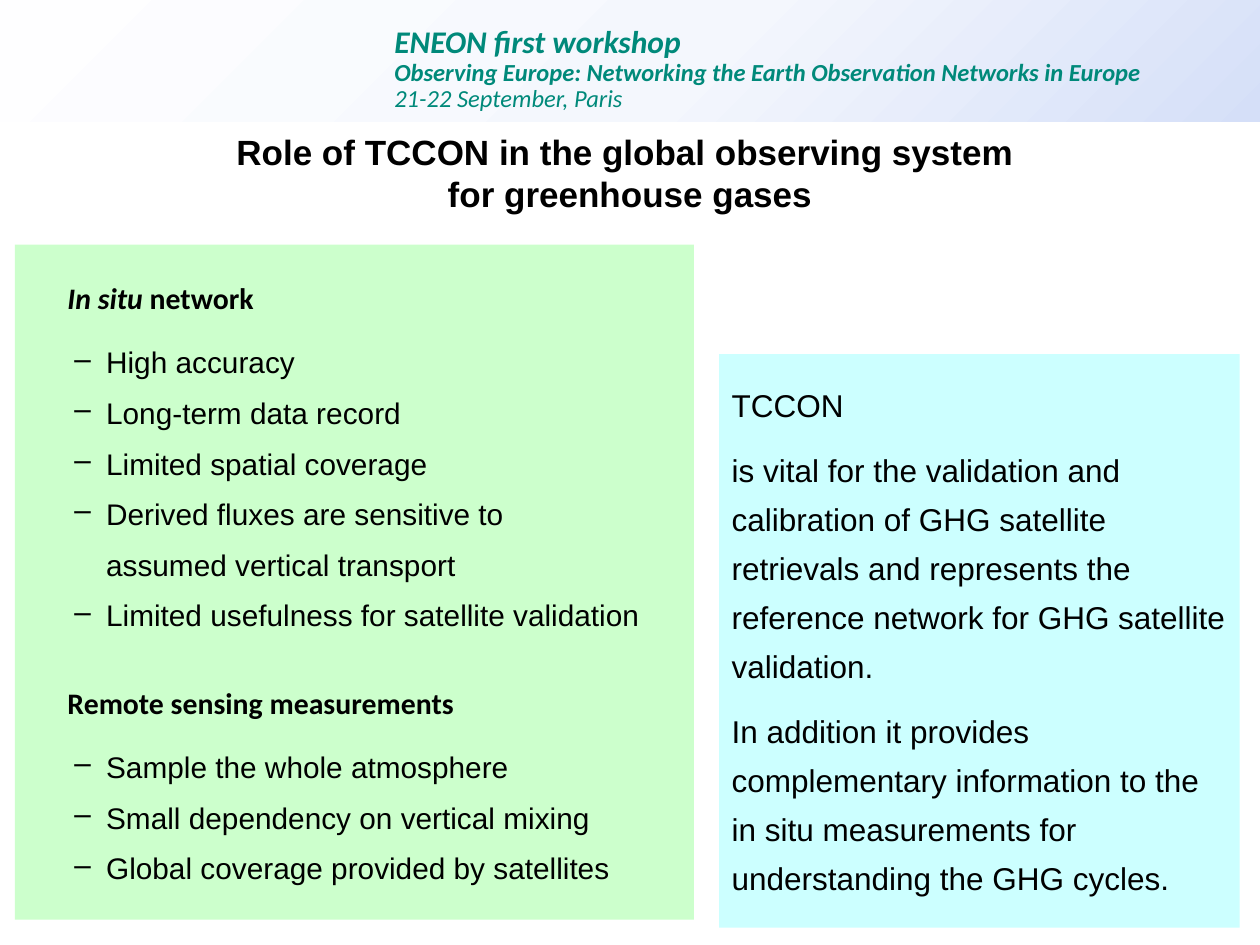
from dataclasses import dataclass
from typing import Optional

from lxml.etree import SubElement
from pptx import Presentation
from pptx.dml.color import RGBColor
from pptx.enum.shapes import MSO_SHAPE
from pptx.enum.text import MSO_ANCHOR, PP_ALIGN
from pptx.oxml import parse_xml
from pptx.oxml.ns import nsdecls, qn
from pptx.util import Cm, Pt


@dataclass(frozen=True)
class Theme:
    black: str = "000000"
    teal: str = "00897A"
    green: str = "CCFFCC"
    cyan: str = "CCFFFF"
    gradient: tuple = ((0, "FEFEFF"), (55, "F4F7FD"), (100, "D5DFF8"))
    body: str = "Arial"
    accent: str = "Calibri"
    title_size: int = 20
    event_size: int = 18
    detail_size: int = 14
    list_size: int = 17
    note_size: int = 18


@dataclass(frozen=True)
class Box:
    left: float
    top: float
    width: float
    height: float
    inset_left: float = 0.25
    inset_top: float = 0.13
    fill: Optional[str] = None


@dataclass(frozen=True)
class Item:
    text: str
    bullet: bool = True
    before: float = 3.4


T = Theme()

HEADER = Box(0, 0, 25.4, 2.46, 7.95, 0.68)
TITLE = Box(0, 2.51, 25.4, 1.96)
LIST_PANEL = Box(0.3, 4.93, 13.69, 13.61, 0.25, 1.83, T.green)
NOTE_PANEL = Box(14.5, 7.14, 10.49, 11.56, 0.25, 0.41, T.cyan)
HEADING_TOPS = (5.51, 13.67)

ITEMS = (
    Item("High accuracy", before=0),
    Item("Long-term data record"),
    Item("Limited spatial coverage"),
    Item("Derived fluxes are sensitive to"),
    Item("assumed vertical transport", bullet=False),
    Item("Limited usefulness for satellite validation"),
    Item("Sample the whole atmosphere", before=61.2),
    Item("Small dependency on vertical mixing"),
    Item("Global coverage provided by satellites"),
)
NOTES = (
    "TCCON",
    "is vital for the validation and calibration of GHG satellite retrievals "
    "and represents the reference network for GHG satellite validation.",
    "In addition it provides complementary information to the in situ "
    "measurements for understanding the GHG cycles.",
)


def add_box(s, box: Box, panel: bool = False):
    """Add a panel or a plain text box and return it."""
    place = [Cm(v) for v in (box.left, box.top, box.width, box.height)]
    if panel:
        sp = s.shapes.add_shape(MSO_SHAPE.RECTANGLE, *place)
        sp.shadow.inherit = False
        sp.line.fill.background()
    else:
        sp = s.shapes.add_textbox(*place)
    if box.fill:
        sp.fill.solid()
        sp.fill.fore_color.rgb = RGBColor.from_string(box.fill)
    tf = sp.text_frame
    tf.word_wrap = True
    tf.vertical_anchor = MSO_ANCHOR.TOP
    tf.margin_left, tf.margin_top = Cm(box.inset_left), Cm(box.inset_top)
    return sp


def add_paragraph(tf, align=PP_ALIGN.LEFT, spacing=None, before: float = 0,
                  margin: float = 0, indent: float = 0, bullet: bool = False):
    """Start a paragraph, using the frame's first one if it is still empty."""
    first = tf.paragraphs[0]
    p = tf.add_paragraph() if first.runs else first
    p.alignment = align
    p.space_before = Pt(before)
    if spacing is not None:
        p.line_spacing = spacing
    pPr = p._p.get_or_add_pPr()
    pPr.set("marL", str(Cm(margin)))
    pPr.set("indent", str(Cm(indent)))
    if bullet:
        SubElement(pPr, qn("a:buChar")).set("char", "–")
    return p


def add_text(p, text: str, size: int = T.list_size, font: str = T.body,
             color: str = T.black, bold: bool = False, italic: bool = False) -> None:
    r = p.add_run()
    r.text = text
    f = r.font
    f.size, f.name, f.bold, f.italic = Pt(size), font, bold, italic
    f.color.rgb = RGBColor.from_string(color)


def set_radial_fill(sp, stops: tuple) -> None:
    """Circular gradient centred beyond the top left corner."""
    marks = "".join(f'<a:gs pos="{at * 1000}"><a:srgbClr val="{color}"/></a:gs>'
                    for at, color in stops)
    sp._element.spPr.insert(2, parse_xml(
        f'<a:gradFill {nsdecls("a")} rotWithShape="1"><a:gsLst>{marks}</a:gsLst>'
        '<a:path path="circle"><a:fillToRect l="-40000" t="-90000" '
        'r="140000" b="190000"/></a:path></a:gradFill>'))


def draw_header(s) -> None:
    sp = add_box(s, HEADER, panel=True)
    set_radial_fill(sp, T.gradient)
    for text, size, bold in (
        ("ENEON first workshop", T.event_size, True),
        ("Observing Europe: Networking the Earth Observation Networks in Europe",
         T.detail_size, True),
        ("21-22 September, Paris", T.detail_size, False),
    ):
        p = add_paragraph(sp.text_frame, spacing=Pt(15))
        add_text(p, text, size=size, font=T.accent, color=T.teal, bold=bold, italic=True)


def draw_list(s) -> None:
    tf = add_box(s, LIST_PANEL, panel=True).text_frame
    for item in ITEMS:
        p = add_paragraph(tf, align=PP_ALIGN.JUSTIFY, spacing=1.25, before=item.before,
                          margin=1.59, indent=-0.64 if item.bullet else 0,
                          bullet=item.bullet)
        add_text(p, item.text)

    # Headings over the two groups: (text, italic) runs
    headings = ((("In situ", True), (" network", False)),
                (("Remote sensing measurements", False),))
    for top, runs in zip(HEADING_TOPS, headings):
        p = add_paragraph(add_box(s, Box(0.3, top, 14.48, 0.97)).text_frame, indent=0.81)
        for text, italic in runs:
            add_text(p, text, font=T.accent, bold=True, italic=italic)


def draw_notes(s) -> None:
    tf = add_box(s, NOTE_PANEL, panel=True).text_frame
    for i, text in enumerate(NOTES):
        p = add_paragraph(tf, spacing=1.3, before=9 if i else 0)
        add_text(p, text, size=T.note_size)


def draw_title(s) -> None:
    tf = add_box(s, TITLE).text_frame
    for text in ("Role of TCCON in the global observing system ", "for greenhouse gases"):
        add_text(add_paragraph(tf, align=PP_ALIGN.CENTER), text, size=T.title_size, bold=True)


def main() -> None:
    prs = Presentation()
    prs.slide_width, prs.slide_height = Cm(25.4), Cm(19.05)
    s = prs.slides.add_slide(prs.slide_layouts[6])
    draw_header(s)
    draw_list(s)
    draw_notes(s)
    draw_title(s)
    prs.save("out.pptx")


if __name__ == "__main__":
    main()
